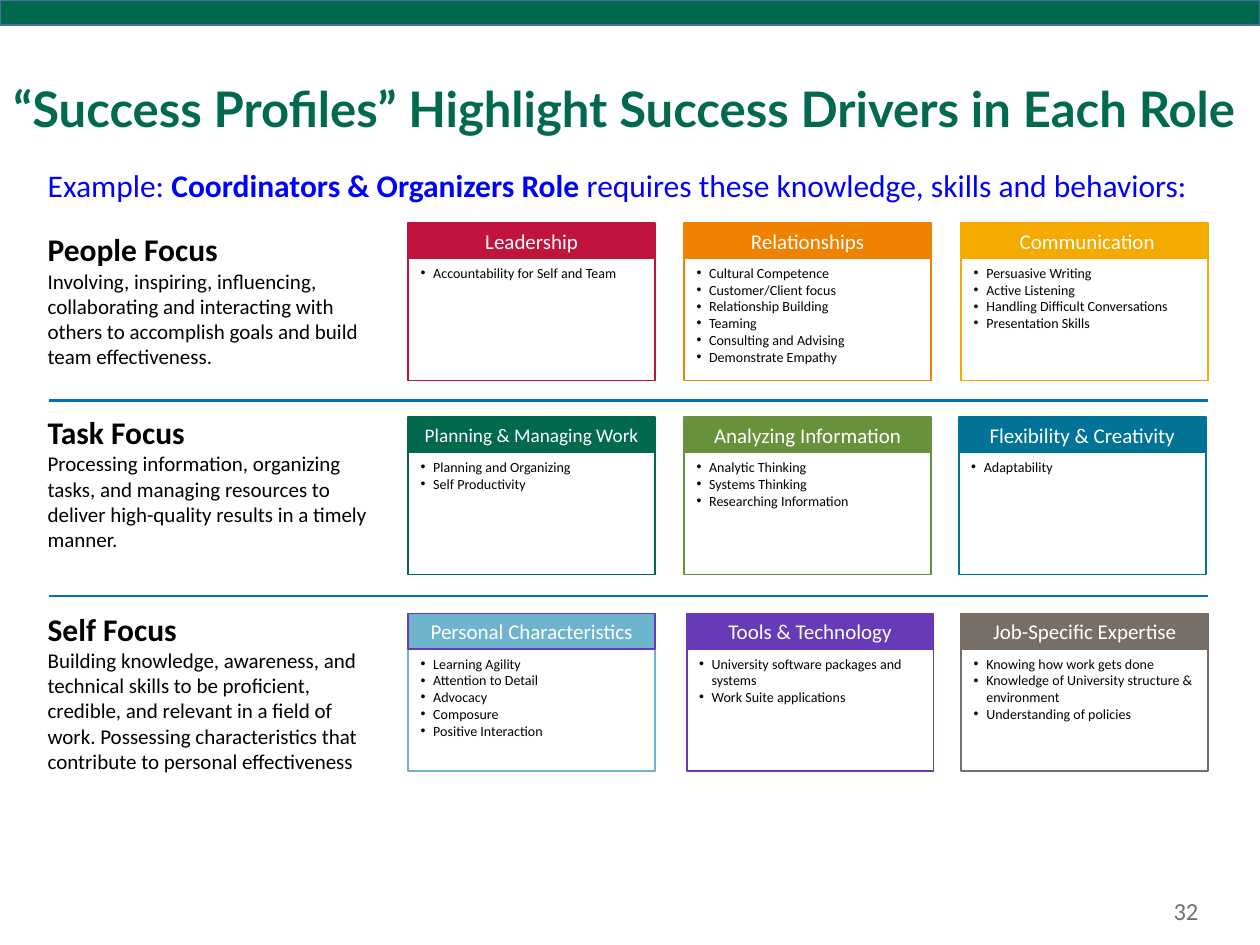
from dataclasses import dataclass

from lxml.etree import SubElement
from pptx import Presentation
from pptx.dml.color import RGBColor
from pptx.enum.shapes import MSO_CONNECTOR, MSO_SHAPE
from pptx.enum.text import MSO_ANCHOR as ANCHOR, MSO_AUTO_SIZE as FIT, PP_ALIGN as ALIGN
from pptx.oxml.ns import qn
from pptx.util import Inches, Pt


@dataclass(frozen=True)
class Theme:
    """Colours, fonts and type sizes of the slide."""
    green: str = "00694E"
    blue: str = "0000FF"
    rule: str = "0070C0"
    bar_line: str = "43739E"
    purple: str = "673BB8"
    grey: str = "776F67"
    black: str = "000000"
    white: str = "FFFFFF"
    title_font: str = "Lato"
    font: str = "Calibri"
    title: float = 28
    heading: float = 18
    number: float = 14
    body: float = 12
    tight: float = 11
    item: float = 8


@dataclass(frozen=True)
class Card:
    """A skill area with its colour and list of skills."""
    name: str
    color: str
    items: tuple
    shift: float = 0
    size: float = Theme.body
    header_line: str = ""


T = Theme()
COLUMNS = (3.24, 5.43, 7.63)
CARD_W, HEADER_H, LIST_H = 1.96, 0.28, 0.97

FOCUS_ROWS = (
    ("People Focus",
     "Involving, inspiring, influencing, collaborating and interacting with others "
     "to accomplish goals and build team effectiveness.",
     1.78, 1.21, 1.77,
     (Card("Leadership", "C0143C", ("Accountability for Self and Team",)),
      Card("Relationships", "EF8200",
           ("Cultural Competence", "Customer/Client focus", "Relationship Building",
            "Teaming", "Consulting and Advising", "Demonstrate Empathy")),
      Card(" Communication", "F4AA00",
           ("Persuasive Writing", "Active Listening",
            "Handling Difficult Conversations", "Presentation Skills")))),
    ("Task Focus",
     "Processing information, organizing tasks, and managing resources to deliver "
     "high-quality results in a timely manner.",
     3.23, 1.41, 3.31,
     (Card("Planning & Managing Work", T.green,
           ("Planning and Organizing", "Self Productivity"), size=T.tight),
      Card("Analyzing Information", "69913B",
           ("Analytic Thinking", "Systems Thinking", "Researching Information")),
      Card("Flexibility & Creativity", "007396", ("Adaptability",), shift=-0.02))),
    ("Self Focus",
     "Building knowledge, awareness, and technical skills to be proficient, credible, "
     "and relevant in a field of work. Possessing characteristics that contribute to "
     "personal effectiveness",
     4.79, 1.41, 4.87,
     (Card("Personal Characteristics", "6EB4CD",
           ("Learning Agility", "Attention to Detail", "Advocacy", "Composure",
            "Positive Interaction"), header_line=T.purple),
      Card("Tools & Technology", T.purple,
           ("University software packages and systems", "Work Suite applications"),
           shift=0.02),
      Card("Job-Specific Expertise", T.grey,
           ("Knowing how work gets done",
            "Knowledge of University structure & environment",
            "Understanding of policies")))),
)


def add_run(p, text, size, color, bold=False, font=T.font):
    """Append a formatted run to a paragraph."""
    r = p.add_run()
    r.text = text
    r.font.name, r.font.size, r.font.bold = font, Pt(size), bold
    r.font.color.rgb = RGBColor.from_string(color)


def add_text(slide, x, y, w, h, paragraphs, align=ALIGN.LEFT, anchor=ANCHOR.TOP):
    """Add a wrapping text box from lists of run arguments."""
    tf = slide.shapes.add_textbox(Inches(x), Inches(y), Inches(w), Inches(h)).text_frame
    tf.word_wrap, tf.vertical_anchor = True, anchor
    for i, runs in enumerate(paragraphs):
        p = tf.add_paragraph() if i else tf.paragraphs[0]
        p.alignment = align
        for run in runs:
            add_run(p, *run)


def add_rect(shapes, x, y, w, h, line, fill=None):
    """Add a flat outlined rectangle."""
    s = shapes.add_shape(MSO_SHAPE.RECTANGLE, Inches(x), Inches(y), Inches(w), Inches(h))
    s.shadow.inherit = False
    if fill:
        s.fill.solid()
        s.fill.fore_color.rgb = RGBColor.from_string(fill)
    else:
        s.fill.background()
    s.line.color.rgb = RGBColor.from_string(line)
    s.line.width = Pt(1)
    return s


def add_bullet(p):
    """Give a paragraph a hanging round bullet."""
    pPr = p._p.get_or_add_pPr()
    pPr.set("marL", str(Inches(0.1)))
    pPr.set("indent", str(Inches(-0.1)))
    SubElement(pPr, qn("a:buFont")).set("typeface", "Arial")
    SubElement(pPr, qn("a:buChar")).set("char", "•")


def add_card(slide, x, y, card):
    """Add a grouped header and bulleted box."""
    shapes = slide.shapes.add_group_shape().shapes
    box = add_rect(shapes, x, y + HEADER_H, CARD_W, LIST_H, card.color)
    header = add_rect(shapes, x, y, CARD_W, HEADER_H,
                      card.header_line or card.color, card.color)
    header.text_frame.vertical_anchor = ANCHOR.MIDDLE
    p = header.text_frame.paragraphs[0]
    p.alignment = ALIGN.CENTER
    add_run(p, card.name, card.size, T.white)
    tf = box.text_frame
    tf.word_wrap, tf.vertical_anchor = True, ANCHOR.TOP
    for i, item in enumerate(card.items):
        p = tf.add_paragraph() if i else tf.paragraphs[0]
        p.alignment = ALIGN.LEFT
        add_bullet(p)
        add_run(p, item, T.item, T.black)


def add_rule(slide, y):
    """Add a horizontal divider between focus rows."""
    c = slide.shapes.add_connector(MSO_CONNECTOR.STRAIGHT, Inches(0.39), Inches(y),
                                   Inches(9.59), Inches(y))
    c.line.color.rgb = RGBColor.from_string(T.rule)
    c.line.width = Pt(1.5)
    SubElement(c._element.spPr, qn("a:effectLst"))


def set_title(slide, text):
    """Place and fill the title placeholder."""
    sp = slide.shapes.title
    sp.left, sp.top, sp.width, sp.height = Inches(0), Inches(0.16), Inches(10), Inches(1.45)
    tf = sp.text_frame
    tf.auto_size, tf.word_wrap, tf.vertical_anchor = FIT.NONE, True, ANCHOR.MIDDLE
    p = tf.paragraphs[0]
    p.alignment, p.line_spacing = ALIGN.CENTER, 0.9
    add_run(p, text, T.title, T.green, True, T.title_font)


def main():
    """Build and save the slide."""
    prs = Presentation()
    prs.slide_width, prs.slide_height = Inches(10), Inches(7.5)
    slide = prs.slides.add_slide(prs.slide_layouts[5])
    add_rect(slide.shapes, 0, 0, 10, 0.2, T.bar_line, T.green)
    set_title(slide, "“Success Profiles” Highlight Success Drivers in Each Role ")
    add_text(slide, 0.28, 1.27, 9.31, 0.4, [[
        ("Example: ", T.heading, T.blue),
        ("Coordinators & Organizers Role ", T.heading, T.blue, True),
        ("requires these knowledge, skills and behaviors:", T.heading, T.blue)]])
    for name, text, text_y, text_h, card_y, cards in FOCUS_ROWS:
        add_text(slide, 0.28, text_y, 2.83, text_h,
                 [[(name, T.heading, T.black, True)], [(text, T.body, T.black)]])
        for x, card in zip(COLUMNS, cards):
            add_card(slide, x + card.shift, card_y, card)
    for y in (3.18, 4.73):
        add_rule(slide, y)
    add_text(slide, 6.61, 7.03, 3, 0.4, [[("32", T.number, T.grey)]],
             ALIGN.RIGHT, ANCHOR.MIDDLE)
    prs.save("out.pptx")


if __name__ == "__main__":
    main()
